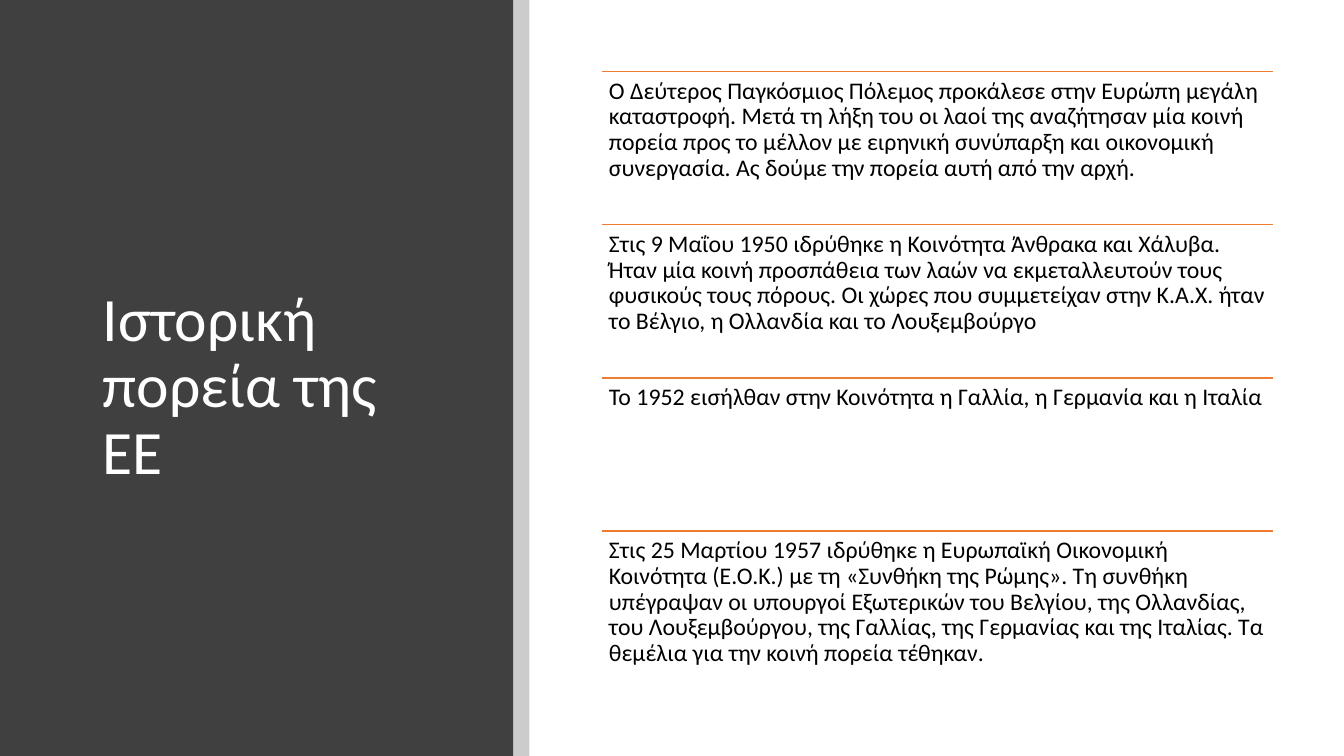
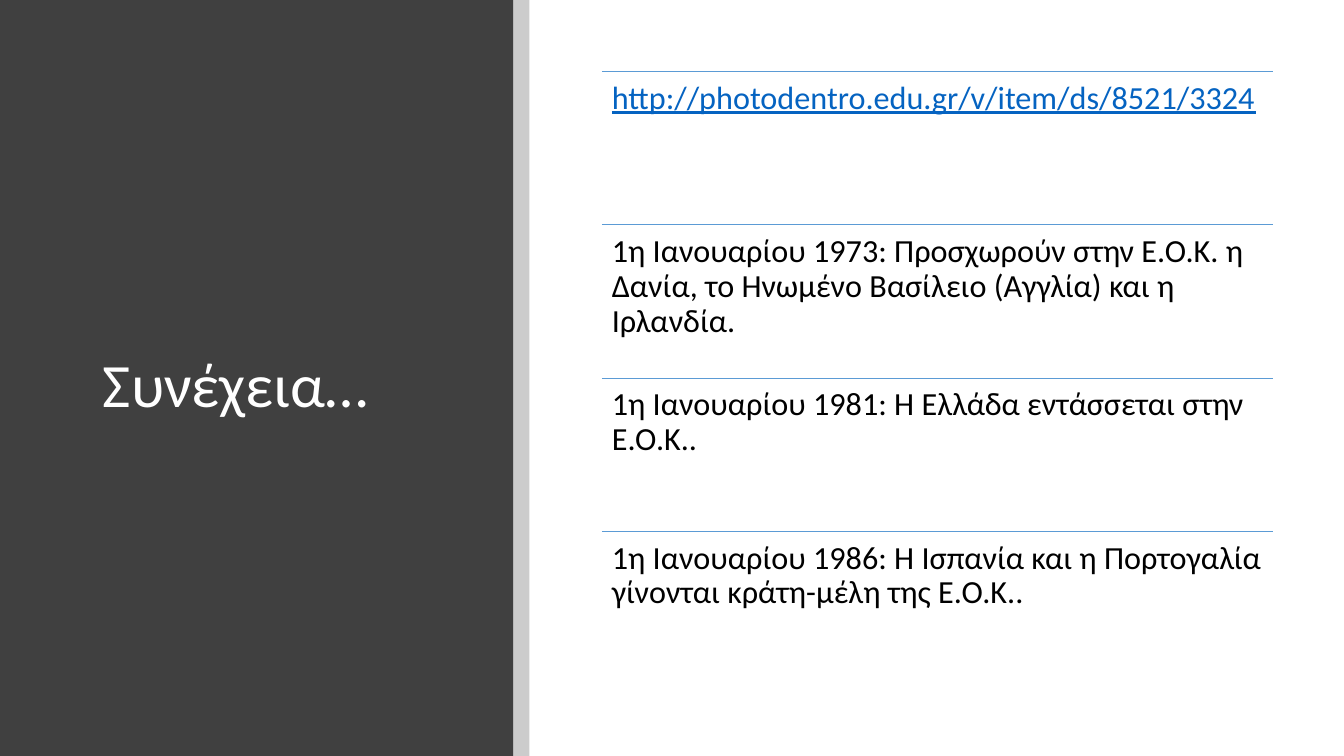
from lxml import etree
from pptx import Presentation
from pptx import util as u
from pptx.dml.color import RGBColor
from pptx.enum import shapes, text
from pptx.oxml.ns import qn

WHITE = RGBColor(0xFF, 0xFF, 0xFF)
BLACK = RGBColor(0x00, 0x00, 0x00)
CHARCOAL = RGBColor(0x40, 0x40, 0x40)
ORANGE = RGBColor(0xED, 0x7D, 0x31)
BLUE = RGBColor(0x5B, 0x9B, 0xD5)
LINK = RGBColor(0x05, 0x63, 0xC1)

# Page and grid, in inches
WIDTH, HEIGHT = 13.33, 7.5
PANEL_W, STRIP_W = 5.09, 0.16
LIST_X, LIST_W = 5.97, 6.66
ROWS, ROW_H = 4, 1.52
LIST_Y = (HEIGHT - ROWS * ROW_H) / 2

HISTORY = [
    "Ο Δεύτερος Παγκόσμιος Πόλεμος προκάλεσε στην Ευρώπη μεγάλη καταστροφή. Μετά τη λήξη του "
    "οι λαοί της αναζήτησαν μία κοινή πορεία προς το μέλλον με ειρηνική συνύπαρξη και "
    "οικονομική συνεργασία. Ας δούμε την πορεία αυτή από την αρχή.",
    "Στις 9 Μαΐου 1950 ιδρύθηκε η Κοινότητα Άνθρακα και Χάλυβα. Ήταν μία κοινή προσπάθεια των "
    "λαών να εκμεταλλευτούν τους φυσικούς τους πόρους. Οι χώρες που συμμετείχαν στην Κ.Α.Χ. "
    "ήταν το Βέλγιο, η Ολλανδία και το Λουξεμβούργο",
    "Το 1952 εισήλθαν στην Κοινότητα η Γαλλία, η Γερμανία και η Ιταλία",
    "Στις 25 Μαρτίου 1957 ιδρύθηκε η Ευρωπαϊκή Οικονομική Κοινότητα (Ε.Ο.Κ.) με τη «Συνθήκη "
    "της Ρώμης». Τη συνθήκη υπέγραψαν οι υπουργοί Εξωτερικών του Βελγίου, της Ολλανδίας, του "
    "Λουξεμβούργου, της Γαλλίας, της Γερμανίας και της Ιταλίας. Τα θεμέλια για την κοινή "
    "πορεία τέθηκαν.",
]
CONTINUED = [
    "http://photodentro.edu.gr/v/item/ds/8521/3324",
    "1η Ιανουαρίου 1973: Προσχωρούν στην Ε.Ο.Κ. η Δανία, το Ηνωμένο Βασίλειο (Αγγλία) και η "
    "Ιρλανδία.",
    "1η Ιανουαρίου 1981: Η Ελλάδα εντάσσεται στην Ε.Ο.Κ..",
    "1η Ιανουαρίου 1986: Η Ισπανία και η Πορτογαλία γίνονται κράτη-μέλη της Ε.Ο.Κ..",
]


class Deck:
    FONT = "Calibri"
    TITLE_SIZE = 44

    def __init__(self):
        self.prs = Presentation()
        self.prs.slide_width = u.Inches(WIDTH)
        self.prs.slide_height = u.Inches(HEIGHT)
        self.s = None

    def slide(self, title):
        self.s = self.prs.slides.add_slide(self.prs.slide_layouts[5])
        self.band(0, PANEL_W, CHARCOAL)
        self.band(PANEL_W, STRIP_W, BLACK, alpha=20)
        self.title(title)

    def band(self, x, w, color, alpha=None):
        """Full-height band; alpha is its opacity in percent."""
        sp = self.s.shapes.add_shape(shapes.MSO_SHAPE.RECTANGLE, u.Inches(x), 0,
                                     u.Inches(w), self.prs.slide_height)
        sp.shadow.inherit = False
        sp.fill.solid()
        sp.fill.fore_color.rgb = color
        sp.line.fill.background()
        if alpha is not None:
            clr = sp._element.spPr.find(qn("a:solidFill"))[0]
            etree.SubElement(clr, qn("a:alpha")).set("val", str(alpha * 1000))

    def title(self, words):
        sp = self.s.shapes.title
        self.s.shapes._spTree.append(sp._element)  # bring in front of the bands
        sp.left, sp.top = u.Inches(0.92), u.Inches(0.89)
        sp.width, sp.height = u.Inches(3.65), u.Inches(5.91)
        tf = sp.text_frame
        tf.vertical_anchor = text.MSO_ANCHOR.MIDDLE
        self.set_words(tf, words, self.TITLE_SIZE, WHITE)

    def set_words(self, tf, words, size, color, underline=None):
        tf.text = words
        tf.word_wrap = True
        tf.auto_size = text.MSO_AUTO_SIZE.NONE
        p = tf.paragraphs[0]
        p.alignment = text.PP_ALIGN.LEFT
        p.line_spacing = 0.9
        font = p.runs[0].font
        font.name, font.size, font.underline = self.FONT, u.Pt(size), underline
        font.color.rgb = color

    def rule(self, y, color, weight):
        ln = self.s.shapes.add_connector(shapes.MSO_CONNECTOR.STRAIGHT, u.Inches(LIST_X),
                                         u.Inches(y), u.Inches(LIST_X + LIST_W), u.Inches(y))
        ln.line.color.rgb = color
        ln.line.width = u.Pt(weight)
        etree.SubElement(ln._element.spPr, qn("a:effectLst"))

    def entry(self, y, words, size, inset):
        tf = self.s.shapes.add_textbox(u.Inches(LIST_X), u.Inches(y), u.Inches(LIST_W),
                                       u.Inches(ROW_H)).text_frame
        tf.margin_left = tf.margin_top = tf.margin_right = tf.margin_bottom = u.Inches(inset)
        is_link = words.startswith("http")
        self.set_words(tf, words, size, LINK if is_link else BLACK, is_link or None)

    def ruled_list(self, entries, size, inset, color, weight):
        for i, words in enumerate(entries):
            y = LIST_Y + i * ROW_H
            self.rule(y, color, weight)
            self.entry(y, words, size, inset)


def main():
    deck = Deck()

    # Slide 1: origins
    deck.slide("Ιστορική πορεία της ΕΕ")
    deck.ruled_list(HISTORY, size=17, inset=0.07, color=ORANGE, weight=1)

    # Slide 2: enlargements
    deck.slide("Συνέχεια…")
    deck.ruled_list(CONTINUED, size=23, inset=0.1, color=BLUE, weight=0.5)

    deck.prs.save("out.pptx")


if __name__ == "__main__":
    main()
